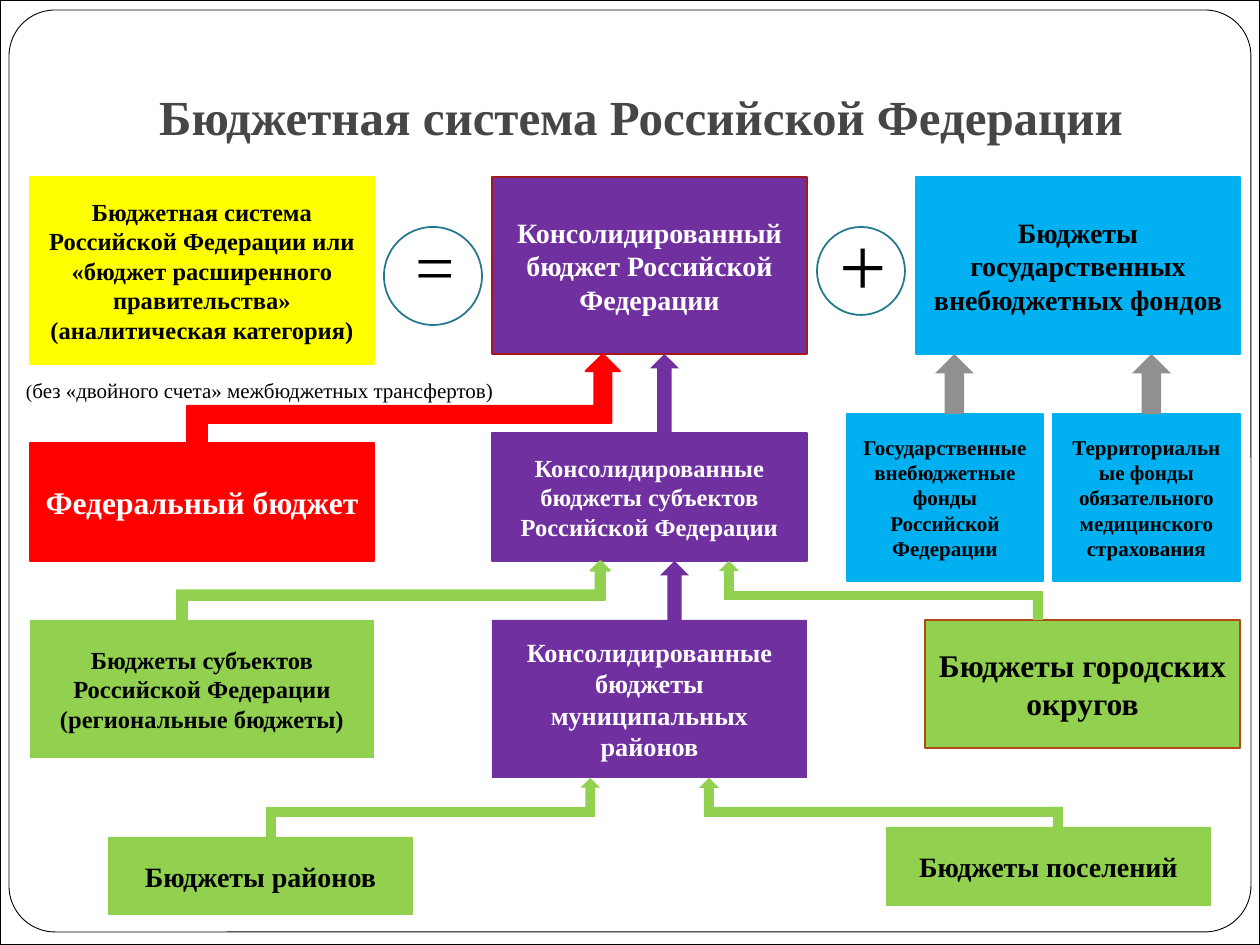
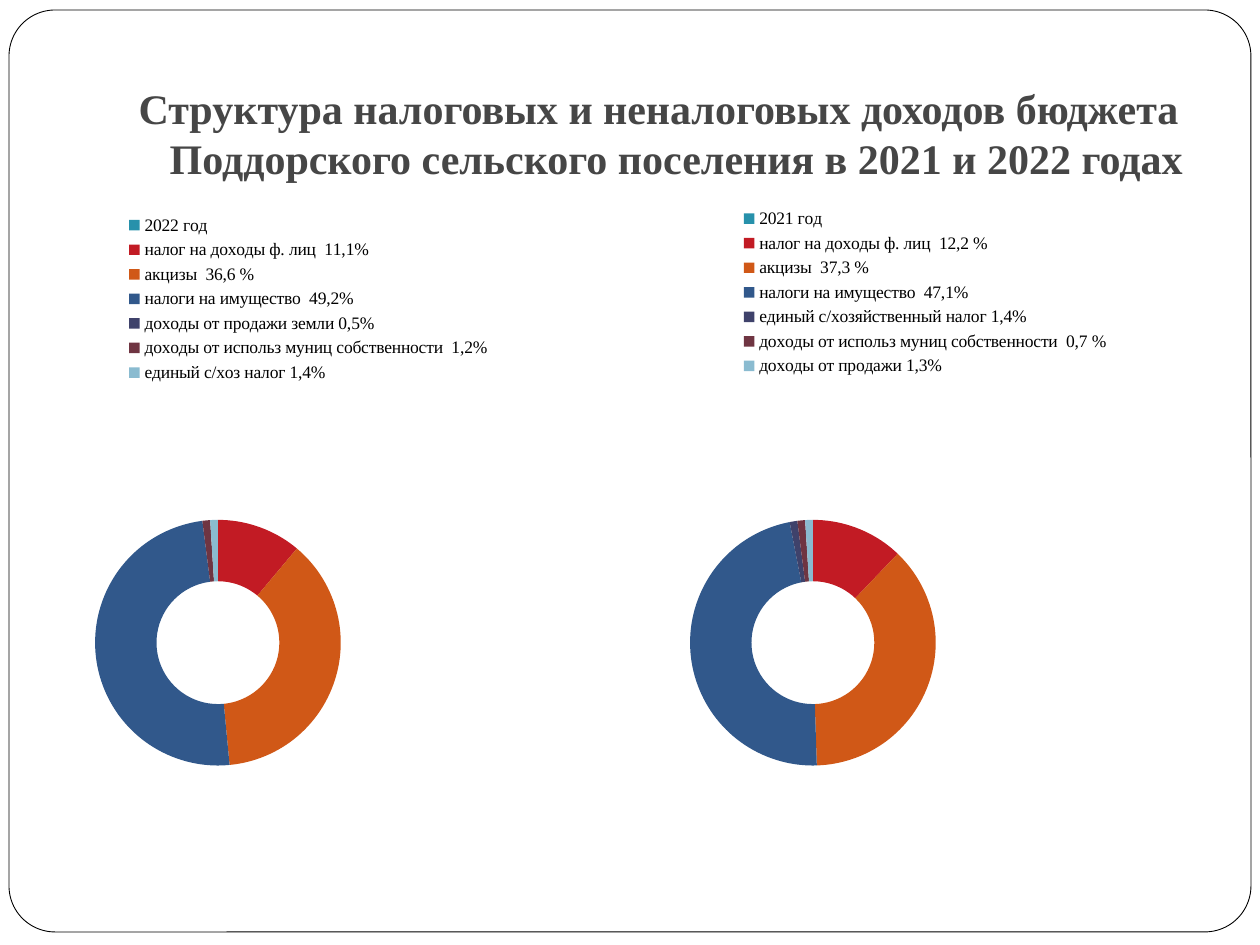
from dataclasses import dataclass

from lxml.etree import SubElement
from pptx import Presentation
from pptx.chart.data import CategoryChartData
from pptx.dml.color import RGBColor
from pptx.enum.chart import XL_CHART_TYPE as ChartKind, XL_LEGEND_POSITION as LegendPlace
from pptx.enum.shapes import MSO_SHAPE as Preset
from pptx.enum.text import MSO_ANCHOR as Anchor, MSO_AUTO_SIZE as AutoSize, PP_ALIGN as Align
from pptx.oxml.ns import qn
from pptx.util import Emu, Pt

EMU_PER_INCH = 914400
PX_PER_INCH = 126
PAGE_WIDTH, PAGE_HEIGHT = 1260, 945
FONT = "Times New Roman"
BLACK, WHITE, TITLE_GREY = "000000", "FFFFFF", "464646"
YELLOW, RED, PURPLE = "FFFF00", "FF0000", "7030A0"
SKY, LIME, GREY, TEAL = "00B0F0", "92D050", "909090", "21788D"
SLICE_COLORS = ("2791AB", "C21B24", "D05817", "31588B", "3F426B", "6F3542", "8ABBD0")
LEFT, MIDDLE = 30, 492
LEFT_WIDTH, MIDDLE_WIDTH = 344, 315


@dataclass(frozen=True)
class Block:
    left: int
    top: int
    width: int
    height: int
    fill: str = ""
    line: str = ""
    text: str = ""
    size: int = 12
    ink: str = BLACK
    preset: Preset = Preset.RECTANGLE
    weight: float = 1


@dataclass(frozen=True)
class Label:
    left: int
    top: int
    width: int
    height: int
    text: str
    size: int
    inset: int = 12
    opening: str = ""


@dataclass(frozen=True)
class Income:
    name: str
    share: int | None


@dataclass(frozen=True)
class Ring:
    left: int
    legend_x: float
    legend_y: float
    incomes: tuple[Income, ...]


PAGE_EDGE = Block(0, 0, PAGE_WIDTH, PAGE_HEIGHT, line=BLACK, weight=0.75)
FRAME = Block(9, 10, 1242, 922, WHITE, BLACK, preset=Preset.ROUNDED_RECTANGLE, weight=0.5)

BUDGETS = (
    Block(LEFT, 177, LEFT_WIDTH, 187, YELLOW, YELLOW,
          "Бюджетная система Российской Федерации или «бюджет расширенного "
          "правительства» (аналитическая категория)", 14),
    Block(MIDDLE, 177, MIDDLE_WIDTH, 177, PURPLE, "A3171E",
          "Консолидированный бюджет Российской Федерации", 16, WHITE),
    Block(916, 177, 324, 177, SKY, SKY, "Бюджеты государственных внебюджетных фондов", 16),
    Block(LEFT, 443, LEFT_WIDTH, 118, RED, RED, "Федеральный бюджет", 18, WHITE),
    Block(MIDDLE, 433, MIDDLE_WIDTH, 128, PURPLE, PURPLE,
          "Консолидированные бюджеты субъектов Российской Федерации", 14, WHITE),
    Block(847, 414, 196, 167, SKY, SKY,
          "Государственные внебюджетные фонды Российской Федерации", 12),
    Block(1053, 414, 187, 167, SKY, SKY,
          "Территориальные фонды обязательного медицинского страхования", 12),
    Block(LEFT, 620, LEFT_WIDTH, 138, LIME, "",
          "Бюджеты субъектов Российской Федерации\n(региональные бюджеты)", 14),
    Block(MIDDLE, 620, MIDDLE_WIDTH, 158, PURPLE, "",
          "Консолидированные бюджеты муниципальных районов", 15, WHITE),
    Block(925, 620, 315, 128, LIME, "AE4A14", "Бюджеты городских округов", 18),
    Block(108, 837, 305, 78, LIME, "", "Бюджеты районов", 16),
    Block(886, 827, 325, 79, LIME, "", "Бюджеты поселений", 16),
)

SIGN_RINGS = (
    Block(384, 227, 98, 98, line=TEAL, preset=Preset.OVAL),
    Block(817, 227, 88, 88, line=TEAL, preset=Preset.OVAL),
)

ARROWS = (
    Block(650, 354, 29, 79, PURPLE, preset=Preset.UP_ARROW),
    Block(935, 354, 39, 60, GREY, preset=Preset.UP_ARROW),
    Block(1132, 354, 39, 60, GREY, preset=Preset.UP_ARROW),
    Block(187, 354, 433, 69, RED, RED, preset=Preset.BENT_UP_ARROW),
    Block(187, 414, 20, 39, RED, RED),
    Block(660, 561, 29, 59, PURPLE, preset=Preset.UP_ARROW),
    Block(177, 561, 433, 39, LIME, LIME, preset=Preset.BENT_UP_ARROW),
    Block(177, 601, 10, 20, LIME, LIME),
    Block(1033, 591, 10, 29, LIME),
    Block(728, 591, 305, 9, LIME),
    Block(719, 561, 20, 39, LIME, preset=Preset.UP_ARROW),
    Block(276, 778, 324, 39, LIME, preset=Preset.BENT_UP_ARROW),
    Block(266, 807, 10, 30, LIME),
    Block(709, 807, 354, 10, LIME),
    Block(1053, 807, 10, 20, LIME),
    Block(699, 778, 20, 39, LIME, preset=Preset.UP_ARROW),
)

LABELS = (
    Label(828, 207, 69, 115, "+", 48),
    Label(403, 217, 59, 98, "=", 40),
    Label(26, 378, 490, 26, "без «двойного счета» межбюджетных трансфертов)", 12, 0, "("),
)

RINGS = (
    Ring(35, 0.15, 0.01, (
        Income("2022 год", None),
        Income("налог на доходы ф. лиц  11,1%", 11),
        Income("акцизы  36,6 %", 37),
        Income("налоги на имущество  49,2%", 49),
        Income("доходы от продажи земли 0,5%", 0),
        Income("доходы от использ муниц собственности  1,2%", 1),
        Income("единый с/хоз налог 1,4%", 1),
    )),
    Ring(630, 0.19, 0.0, (
        Income("2021 год", 0),
        Income("налог на доходы ф. лиц  12,2 %", 12),
        Income("акцизы  37,3 %", 37),
        Income("налоги на имущество  47,1%", 47),
        Income("единый с/хозяйственный налог 1,4%", 1),
        Income("доходы от использ муниц собственности  0,7 %", 1),
        Income("доходы от продажи 1,3%", 1),
    )),
)


def px(length: int) -> Emu:
    return Emu(round(length * EMU_PER_INCH / PX_PER_INCH))


def color(code: str) -> RGBColor:
    return RGBColor.from_string(code)


def style_font(font, size: int, ink: str, bold: bool = False) -> None:
    font.name = FONT
    font.size = Pt(size)
    font.bold = bold
    font.color.rgb = color(ink)


def place(item, left: int, top: int, width: int, height: int) -> None:
    item.left, item.top, item.width, item.height = map(px, (left, top, width, height))


def draw_block(page, block: Block):
    box = page.shapes.add_shape(
        block.preset, *map(px, (block.left, block.top, block.width, block.height)))
    box.shadow.inherit = False
    if block.fill:
        box.fill.solid()
        box.fill.fore_color.rgb = color(block.fill)
    else:
        box.fill.background()
    if block.line:
        box.line.color.rgb = color(block.line)
        box.line.width = Pt(block.weight)
    else:
        box.line.fill.background()
    if block.text:
        frame = box.text_frame
        frame.word_wrap = True
        frame.vertical_anchor = Anchor.MIDDLE
        frame.text = block.text
        for para in frame.paragraphs:
            para.alignment = Align.CENTER
            style_font(para.font, block.size, block.ink, bold=True)
    return box


def draw_label(page, label: Label) -> None:
    box = page.shapes.add_textbox(
        *map(px, (label.left, label.top, label.width, label.height)))
    frame = box.text_frame
    frame.word_wrap = True
    frame.margin_left = frame.margin_right = px(label.inset)
    frame.margin_top = frame.margin_bottom = px(label.inset // 2)
    para = frame.paragraphs[0]
    style_font(para.font, label.size, BLACK)
    if label.opening:
        span = para.add_run()
        span.text = label.opening
        span.font.size = Pt(label.size - 1)
    para.add_run().text = label.text


def add_page(deck, title: str, area: tuple[int, int, int, int], size: int, align: Align):
    page = deck.slides.add_slide(deck.slide_layouts[5])
    border = draw_block(page, FRAME)
    border.adjustments[0] = 0.05
    page.shapes.element.insert(2, border.element)
    heading = page.shapes.title
    place(heading, *area)
    frame = heading.text_frame
    frame.word_wrap = True
    frame.auto_size = AutoSize.NONE
    frame.vertical_anchor = Anchor.BOTTOM
    frame.margin_bottom = px(13)
    para = frame.paragraphs[0]
    para.text = title
    para.alignment = align
    style_font(para.font, size, TITLE_GREY, bold=True)
    return page


def set_layout(parent, index: int, inner: bool, **spans: float) -> None:
    for old in parent.findall(qn("c:layout")):
        parent.remove(old)
    layout = SubElement(parent, qn("c:layout"))
    parent.insert(index, layout)
    manual = SubElement(layout, qn("c:manualLayout"))
    settings = {"layoutTarget": "inner"} if inner else {}
    settings |= {"xMode": "edge", "yMode": "edge"} | spans
    for name, value in settings.items():
        SubElement(manual, qn(f"c:{name}")).set("val", str(value))


def draw_ring(page, ring: Ring) -> None:
    data = CategoryChartData()
    data.categories = [income.name for income in ring.incomes]
    data.add_series("Series 1", [income.share for income in ring.incomes])
    chart = page.shapes.add_chart(
        ChartKind.DOUGHNUT, *map(px, (ring.left, 204, 546, 655)), data).chart
    chart.has_title = False
    style_font(chart.font, 18, BLACK)
    chart.has_legend = True
    chart.legend.position = LegendPlace.TOP
    chart.legend.include_in_layout = False
    style_font(chart.legend.font, 10, BLACK)
    plot = chart.plots[0]
    plot.vary_by_categories = True
    for index, code in enumerate(SLICE_COLORS):
        fill = plot.series[0].points[index].format.fill
        fill.solid()
        fill.fore_color.rgb = color(code)
    root = chart.element
    set_layout(root.find(".//" + qn("c:plotArea")), 0, True, x=0.11, y=0.48, w=0.45, h=0.38)
    set_layout(root.find(".//" + qn("c:legend")), 1, False,
               x=ring.legend_x, y=ring.legend_y, w=0.7, h=0.27)


def build_system_page(deck) -> None:
    page = add_page(deck, "Бюджетная система Российской Федерации",
                    (62, 45, 1158, 113), 28, Align.CENTER)
    for block in (PAGE_EDGE, *BUDGETS, *SIGN_RINGS, *ARROWS):
        draw_block(page, block)
    for label in LABELS:
        draw_label(page, label)


def build_income_page(deck) -> None:
    page = add_page(deck, "Структура налоговых и неналоговых доходов бюджета "
                    "Поддорского сельского поселения в 2021 и 2022 годах",
                    (126, 39, 1085, 157), 24, Align.LEFT)
    indent = px(31)
    properties = page.shapes.title.text_frame.paragraphs[0]._p.get_or_add_pPr()
    properties.set("marL", str(indent))
    properties.set("indent", str(-indent))
    for ring in RINGS:
        draw_ring(page, ring)


def main() -> None:
    deck = Presentation()
    deck.slide_width, deck.slide_height = px(PAGE_WIDTH), px(PAGE_HEIGHT)
    build_system_page(deck)
    build_income_page(deck)
    deck.save("out.pptx")


if __name__ == "__main__":
    main()
